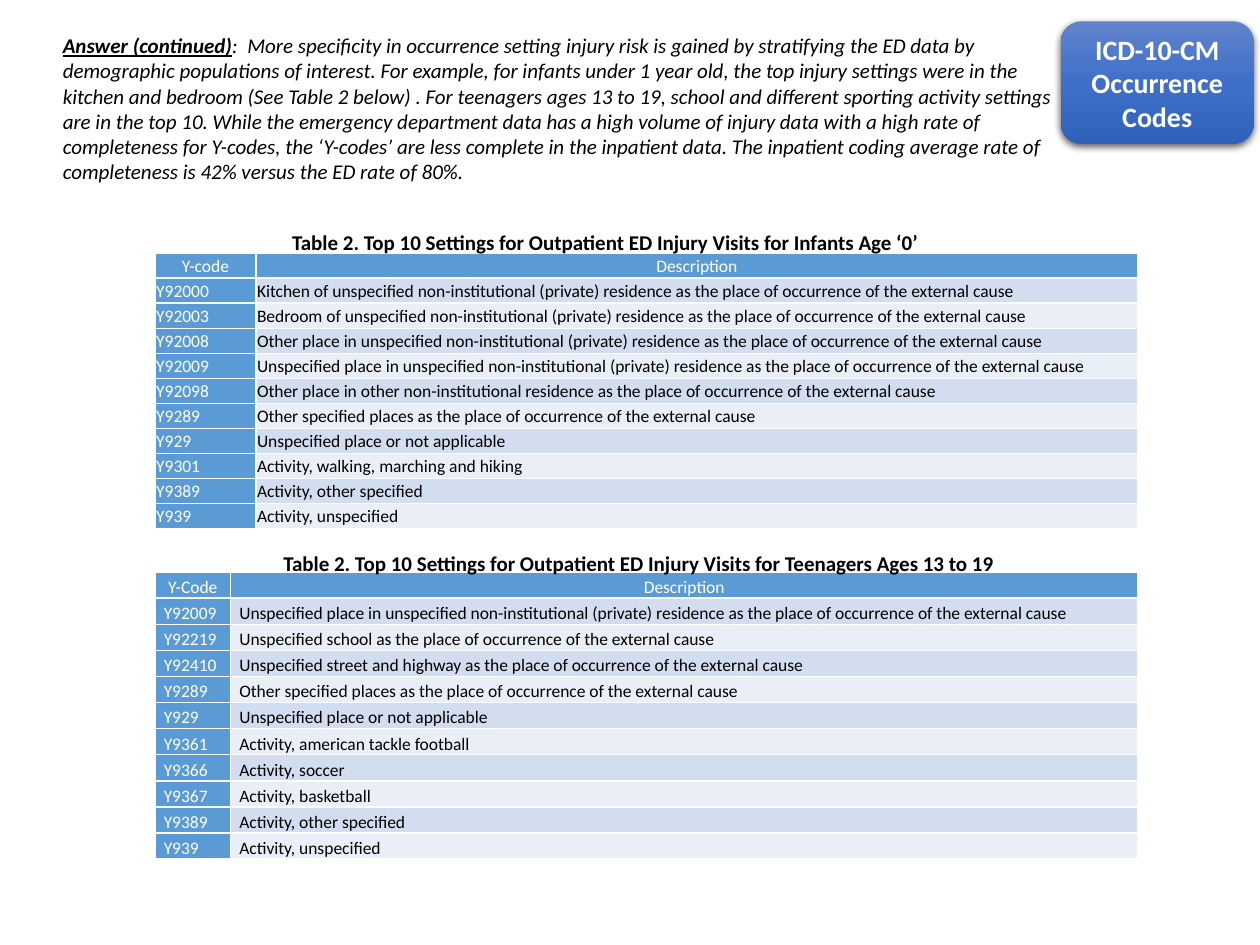
from lxml import etree
from pptx import Presentation
from pptx.dml.color import RGBColor
from pptx.enum.shapes import MSO_SHAPE as Shape
from pptx.enum.text import MSO_ANCHOR as Anchor, MSO_AUTO_SIZE as Fit, PP_ALIGN as Align
from pptx.util import Inches, Pt

WHITE = RGBColor(0xFF, 0xFF, 0xFF)
BLACK = RGBColor(0, 0, 0)
BLUE = RGBColor(0x5B, 0x9B, 0xD5)
BANDS = RGBColor(0xD2, 0xDE, 0xEF), RGBColor(0xEA, 0xEF, 0xF7)
NS = 'xmlns:a="http://schemas.openxmlformats.org/drawingml/2006/main"'

HOME = "unspecified non-institutional (private) residence"
CAUSE = "as the place of occurrence of the external cause"
TABLES = [
    dict(
        top=2.01, height=2.1, widths=(0.8, 7), pads=(0.01, 0.01),
        anchors=(Anchor.MIDDLE, Anchor.TOP),
        title="Table 2. Top 10 Settings for Outpatient ED Injury Visits for Infants Age ‘0’",
        box=(2.22, 1.77, 5.29, 0.3),
        rows=[
            ("Y-code", "Description"),
            ("Y92000", f"Kitchen of {HOME} {CAUSE}"),
            ("Y92003", f"Bedroom of {HOME} {CAUSE}"),
            ("Y92008", f"Other place in {HOME} {CAUSE}"),
            ("Y92009", f"Unspecified place in {HOME} {CAUSE}"),
            ("Y92098", f"Other place in other non-institutional residence {CAUSE}"),
            ("Y9289", f"Other specified places {CAUSE}"),
            ("Y929", "Unspecified place or not applicable"),
            ("Y9301", "Activity, walking, marching and hiking"),
            ("Y9389", "Activity, other specified"),
            ("Y939", "Activity, unspecified"),
        ],
    ),
    dict(
        top=4.54, height=2.28, widths=(0.6, 7.2), pads=(0.07, 0),
        anchors=(Anchor.BOTTOM, Anchor.BOTTOM),
        title="Table 2. Top 10 Settings for Outpatient ED Injury Visits for Teenagers Ages 13 to 19",
        box=(2.15, 4.32, 5.97, 0.3),
        rows=[
            ("Y-Code", "Description"),
            ("Y92009", f"Unspecified place in {HOME} {CAUSE}"),
            ("Y92219", f"Unspecified school {CAUSE}"),
            ("Y92410", f"Unspecified street and highway {CAUSE}"),
            ("Y9289", f"Other specified places {CAUSE}"),
            ("Y929", "Unspecified place or not applicable"),
            ("Y9361", "Activity, american tackle football"),
            ("Y9366", "Activity, soccer"),
            ("Y9367", "Activity, basketball"),
            ("Y9389", "Activity, other specified"),
            ("Y939", "Activity, unspecified"),
        ],
    ),
]


def add_run(para, text, size, color, **style):
    """Append a Calibri run; style holds further font attributes."""
    run = para.add_run()
    run.text = text
    run.font.color.rgb = color
    for name, value in dict(name="Calibri", size=Pt(size), **style).items():
        setattr(run.font, name, value)


def add_box(box, wrap):
    """Add a text box that grows with its text; return its first paragraph."""
    frame = slide.shapes.add_textbox(*map(Inches, box)).text_frame
    frame.word_wrap = wrap
    frame.auto_size = Fit.SHAPE_TO_FIT_TEXT
    return frame.paragraphs[0]


prs = Presentation()
prs.slide_width, prs.slide_height = Inches(10), Inches(7.5)
slide = prs.slides.add_slide(prs.slide_layouts[6])

# Answer text
para = add_box((0.4, 0.21, 8.09, 1.31), True)
add_run(para, "Answer (continued)", 12, BLACK, bold=True, italic=True, underline=True)
add_run(
    para,
    ":  More specificity in occurrence setting injury risk is gained by stratifying the ED "
    "data by demographic populations of interest. For example, for infants under 1 year old, "
    "the top injury settings were in the kitchen and bedroom (See Table 2 below) . For "
    "teenagers ages 13 to 19, school and different sporting activity settings are in the top "
    "10. While the emergency department data has a high volume of injury data with a high rate "
    "of completeness for Y-codes, the ‘Y-codes’ are less complete in the inpatient data. The "
    "inpatient coding average rate of completeness is 42% versus the ED rate of 80%.",
    12, BLACK, italic=True,
)

# Topic badge
badge = slide.shapes.add_shape(
    Shape.ROUNDED_RECTANGLE, Inches(8.42), Inches(0.17), Inches(1.53), Inches(0.97)
)
badge.line.fill.background()
badge.fill.gradient()
stops = "".join(
    f'<a:gs pos="{pos * 1000}"><a:srgbClr val="{color}"/></a:gs>'
    for pos, color in [(0, "6183CB"), (50, "3E70CA"), (100, "3062BB")]
)
props = badge.element.spPr
old = props.find("{*}gradFill")
props.replace(old, etree.fromstring(
    f'<a:gradFill {NS} rotWithShape="1"><a:gsLst>{stops}</a:gsLst>'
    '<a:lin ang="5400000" scaled="0"/></a:gradFill>'
))
props.append(etree.fromstring(
    f'<a:effectLst {NS}><a:outerShdw blurRad="{Pt(4.5)}" dist="{Pt(1.5)}" dir="5400000" '
    'algn="ctr" rotWithShape="0"><a:srgbClr val="000000"><a:alpha val="63000"/></a:srgbClr>'
    '</a:outerShdw></a:effectLst>'
))
frame = badge.text_frame
frame.word_wrap = True
frame.vertical_anchor = Anchor.MIDDLE
frame.paragraphs[0].alignment = Align.CENTER
add_run(frame.paragraphs[0], "ICD-10-CM Occurrence Codes", 16, WHITE, bold=True)

# Code tables with their titles
for part in TABLES:
    rows = part["rows"]
    table = slide.shapes.add_table(
        len(rows), 2, Inches(1.23), Inches(part["top"]), Inches(7.8), Inches(part["height"])
    ).table
    table.first_col = True
    for col, width in zip(table.columns, part["widths"]):
        col.width = Inches(width)
    side, edge = map(Inches, part["pads"])
    for r, texts in enumerate(rows):
        for c, text in enumerate(texts):
            cell = table.cell(r, c)
            head = r == 0
            look = dict(
                margin_left=side, margin_right=side, margin_top=edge, margin_bottom=edge,
                vertical_anchor=part["anchors"][0 if head else 1],
            )
            for name, value in look.items():
                setattr(cell, name, value)
            dark = head or c == 0
            cell.fill.solid()
            cell.fill.fore_color.rgb = BLUE if dark else BANDS[(r - 1) % 2]
            para = cell.text_frame.paragraphs[0]
            para.alignment = Align.CENTER if head else Align.LEFT
            para.line_spacing = 1.07
            add_run(para, text, 10, WHITE if dark else BLACK, bold=False)
    add_run(add_box(part["box"], False), part["title"], 12, BLACK, bold=True)

prs.save("out.pptx")
